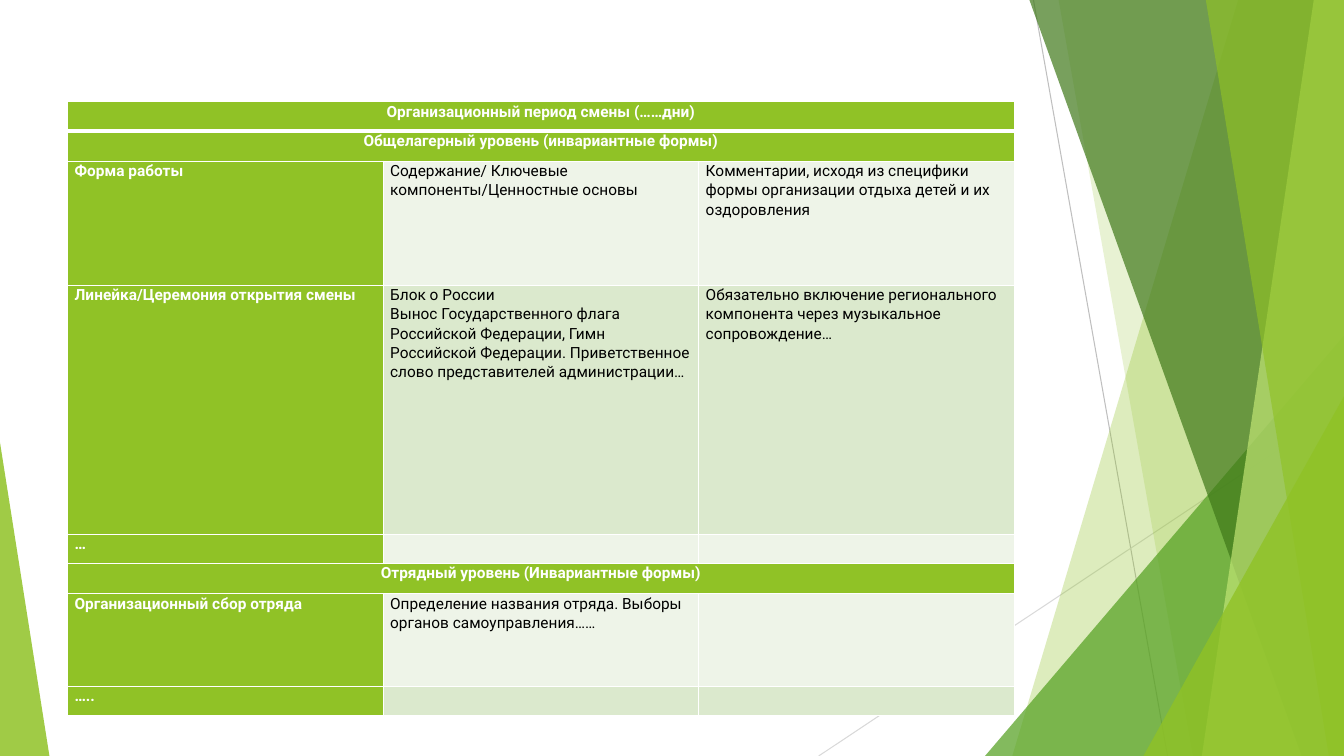
"""Build a slide with the plan of a camp session's opening period."""
from dataclasses import dataclass

from lxml.etree import SubElement
from pptx import Presentation
from pptx.dml.color import RGBColor
from pptx.enum.shapes import MSO_CONNECTOR as Connector, MSO_SHAPE as Preset
from pptx.enum.text import PP_ALIGN as Align
from pptx.oxml.ns import qn
from pptx.util import Inches, Pt

WHITE = RGBColor(0xFF, 0xFF, 0xFF)
BLACK = RGBColor(0x00, 0x00, 0x00)
LIME = RGBColor(0x90, 0xC2, 0x26)
GREEN = RGBColor(0x54, 0xA0, 0x21)
FOREST = RGBColor(0x3F, 0x78, 0x19)
PALE_LIME = RGBColor(0xC0, 0xE4, 0x74)
BAND_LIGHT = RGBColor(0xEE, 0xF4, 0xE8)
BAND_DARK = RGBColor(0xDB, 0xE9, 0xCD)
GRAY = RGBColor(0xBF, 0xBF, 0xBF)
LIGHT_GRAY = RGBColor(0xD9, 0xD9, 0xD9)

WIDTH, HEIGHT = 13.33, 7.5
FONT_SIZE = Pt(11)


@dataclass
class Ray:
    start: tuple[float, float]
    end: tuple[float, float]
    color: RGBColor


@dataclass
class Blade:
    """A shape running from its top and bottom x to the right slide edge."""
    top: float
    bottom: float
    color: RGBColor
    opacity: int


@dataclass
class Corner:
    """A triangle standing on the bottom slide edge."""
    left: float
    top: float
    width: float
    apex: float
    color: RGBColor
    opacity: int


@dataclass
class Row:
    height: float
    cells: tuple[str, ...]
    band: RGBColor = LIME


RAYS = [
    Ray((10.25, 0), (11.58, HEIGHT), GRAY),
    Ray((WIDTH, 4.03), (8.12, HEIGHT), LIGHT_GRAY),
]
FACETS = [
    Blade(12.28, 10.04, LIME, 30),
    Blade(10.5, 11.83, LIME, 20),
    Corner(9.77, 3.33, 3.56, 1, GREEN, 72),
    Blade(10.21, 12.91, FOREST, 70),
    Blade(13.03, 11.92, PALE_LIME, 70),
    Blade(11.96, 13.18, LIME, 65),
    Corner(11.34, 3.93, 1.99, 1, LIME, 80),
    Corner(0, 4.39, 0.49, 0, LIME, 85),
]
ROWS = [
    Row(0.29, ("Организационный период смены (……дни)",)),
    Row(0.3, ("Общелагерный уровень (инвариантные формы)",)),
    Row(1.23, (
        "Форма работы",
        "Содержание/ Ключевые компоненты/Ценностные основы",
        "Комментарии, исходя из специфики формы организации отдыха детей и их оздоровления",
    ), BAND_LIGHT),
    Row(2.47, (
        "Линейка/Церемония открытия смены",
        "Блок о России\nВынос Государственного флага Российской Федерации, Гимн Российской "
        "Федерации. Приветственное слово представителей администрации…",
        "Обязательно включение регионального компонента через музыкальное сопровождение…",
    ), BAND_DARK),
    Row(0.29, ("…", "", ""), BAND_LIGHT),
    Row(0.3, ("Отрядный уровень (Инвариантные формы)",)),
    Row(0.92, (
        "Организационный сбор отряда",
        "Определение названия отряда. Выборы органов самоуправления……",
        "",
    ), BAND_LIGHT),
    Row(0.29, ("…..", "", ""), BAND_DARK),
]
COLUMNS = 3
COLUMN_WIDTH = 3.13


def add_ray(slide, ray: Ray) -> None:
    points = [Inches(value) for value in ray.start + ray.end]
    connector = slide.shapes.add_connector(Connector.STRAIGHT, *points)
    connector.line.color.rgb = ray.color
    connector.line.width = Pt(0.75)
    SubElement(connector._element.spPr, qn("a:effectLst"))


def add_facet(slide, facet: Blade | Corner) -> None:
    if isinstance(facet, Blade):
        builder = slide.shapes.build_freeform(Inches(facet.top), 0)
        corners = [(WIDTH, 0), (WIDTH, HEIGHT), (facet.bottom, HEIGHT)]
        builder.add_line_segments([(Inches(x), Inches(y)) for x, y in corners])
        shape = builder.convert_to_shape()
    else:
        shape = slide.shapes.add_shape(
            Preset.ISOSCELES_TRIANGLE, Inches(facet.left), Inches(facet.top),
            Inches(facet.width), Inches(HEIGHT - facet.top))
        shape.adjustments[0] = facet.apex
    shape.shadow.inherit = False
    shape.line.fill.background()
    shape.fill.solid()
    shape.fill.fore_color.rgb = facet.color
    color = shape._element.spPr.find(f"{qn('a:solidFill')}/{qn('a:srgbClr')}")
    SubElement(color, qn("a:alpha"), val=str(facet.opacity * 1000))


def set_borders(cell, bottom: float) -> None:
    properties = cell._tc.get_or_add_tcPr()
    for side, width in (("L", 1), ("R", 1), ("T", 1), ("B", bottom)):
        line = SubElement(properties, qn(f"a:ln{side}"), w=str(Pt(width)))
        fill = SubElement(line, qn("a:solidFill"))
        SubElement(fill, qn("a:srgbClr"), val=str(WHITE))


def write_cell(cell, text: str, color: RGBColor, align: Align) -> None:
    cell.margin_left = cell.margin_right = Inches(0.07)
    cell.margin_top = cell.margin_bottom = 0
    for index, line in enumerate(text.split("\n")):
        frame = cell.text_frame
        paragraph = frame.add_paragraph() if index else frame.paragraphs[0]
        paragraph.alignment = align
        paragraph.line_spacing = 1.07
        if not line:
            SubElement(paragraph._p, qn("a:endParaRPr"), sz=str(int(FONT_SIZE.pt * 100)))
            continue
        run = paragraph.add_run()
        run.text = line
        run.font.name = "Roboto"
        run.font.size = FONT_SIZE
        run.font.bold = color == WHITE
        run.font.color.rgb = color


def add_plan(slide, rows: list[Row]) -> None:
    table = slide.shapes.add_table(
        len(rows), COLUMNS, Inches(0.67), Inches(1.01), Inches(COLUMN_WIDTH * COLUMNS),
        Inches(sum(row.height for row in rows))).table
    table.first_row = table.horz_banding = False
    for column in table.columns:
        column.width = Inches(COLUMN_WIDTH)
    for index, row in enumerate(rows):
        table.rows[index].height = Inches(row.height)
        is_heading = len(row.cells) == 1
        if is_heading:
            table.cell(index, 0).merge(table.cell(index, COLUMNS - 1))
        for position in range(COLUMNS):
            cell = table.cell(index, position)
            set_borders(cell, 1 if index else 3)
            cell.fill.solid()
            cell.fill.fore_color.rgb = row.band if position else LIME
        for position, text in enumerate(row.cells):
            write_cell(table.cell(index, position), text, BLACK if position else WHITE,
                       Align.CENTER if is_heading else Align.LEFT)


def main() -> None:
    presentation = Presentation()
    presentation.slide_width = Inches(WIDTH)
    presentation.slide_height = Inches(HEIGHT)
    slide = presentation.slides.add_slide(presentation.slide_layouts[6])
    for ray in RAYS:
        add_ray(slide, ray)
    for facet in FACETS:
        add_facet(slide, facet)
    add_plan(slide, ROWS)
    presentation.save("out.pptx")


if __name__ == "__main__":
    main()
